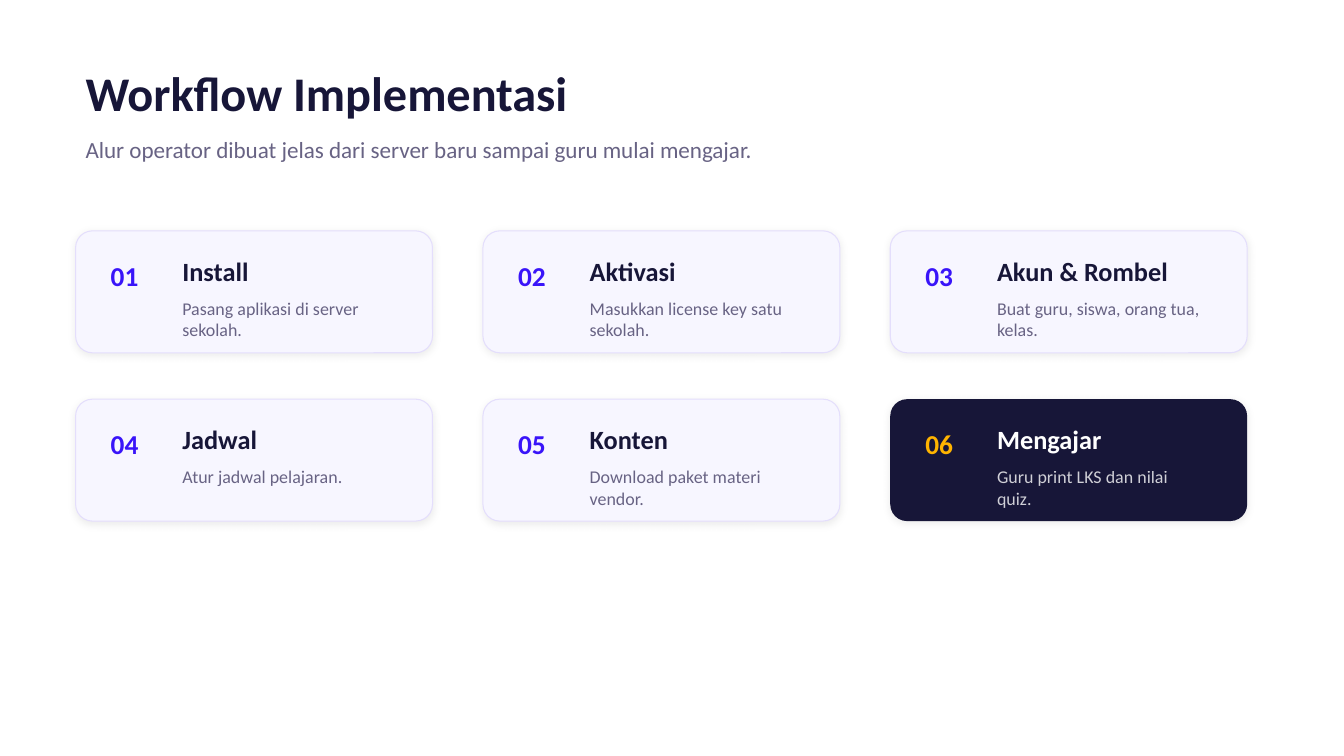
from dataclasses import dataclass

from lxml import etree
from pptx import Presentation
from pptx.dml.color import RGBColor
from pptx.enum.shapes import MSO_SHAPE
from pptx.enum.text import MSO_ANCHOR, MSO_AUTO_SIZE, PP_ALIGN
from pptx.oxml import parse_xml
from pptx.oxml.ns import nsdecls, qn
from pptx.util import Inches, Pt

ROUNDED = MSO_SHAPE.ROUNDED_RECTANGLE
TOP = MSO_ANCHOR.TOP
LEFT = PP_ALIGN.LEFT
NO_AUTOFIT = MSO_AUTO_SIZE.NONE
TITLE_ONLY_LAYOUT = 5

FONT = "Calibri"
NAVY, GREY, VIOLET, AMBER, WHITE = "171638", "686384", "3914F9", "FFB400", "FFFFFF"
PALE, BORDER = "F7F6FF", "E4DEFC"

COLUMNS = 3
GRID_LEFT, GRID_TOP = 0.75, 2.29
COLUMN_STEP, ROW_STEP = 4.04, 1.67
CARD_WIDTH, CARD_HEIGHT = 3.54, 1.21


@dataclass(frozen=True)
class CardStyle:
    fill: str
    border: str | None
    number: str
    heading: str
    detail: str
    detail_opacity: int = 100


@dataclass(frozen=True)
class Step:
    heading: str
    detail: str
    style: CardStyle


LIGHT = CardStyle(PALE, BORDER, VIOLET, NAVY, GREY)
DARK = CardStyle(NAVY, None, AMBER, WHITE, WHITE, 80)

STEPS = [
    Step("Install", "Pasang aplikasi di server sekolah.", LIGHT),
    Step("Aktivasi", "Masukkan license key satu sekolah.", LIGHT),
    Step("Akun & Rombel", "Buat guru, siswa, orang tua, kelas.", LIGHT),
    Step("Jadwal", "Atur jadwal pelajaran.", LIGHT),
    Step("Konten", "Download paket materi vendor.", LIGHT),
    Step("Mengajar", "Guru print LKS dan nilai quiz.", DARK),
]


def color(value: str) -> RGBColor:
    return RGBColor.from_string(value)


def write(shape, text: str, size: float, text_color: str,
          bold: bool = False, opacity: int = 100) -> None:
    """Fill a shape with one left-aligned, top-anchored paragraph."""
    frame = shape.text_frame
    frame.text = text
    frame.word_wrap = True
    frame.auto_size = NO_AUTOFIT
    frame.vertical_anchor = TOP
    paragraph = frame.paragraphs[0]
    paragraph.alignment = LEFT
    font = paragraph.runs[0].font
    font.name = FONT
    font.size = Pt(size)
    font.bold = bold
    font.color.rgb = color(text_color)
    if opacity < 100:
        rgb = paragraph.runs[0].font._element.find(f".//{qn('a:srgbClr')}")
        etree.SubElement(rgb, qn("a:alpha")).set("val", str(opacity * 1000))


def add_label(slide, left: float, top: float, width: float, height: float,
              text: str, size: float, text_color: str,
              bold: bool = False, opacity: int = 100) -> None:
    box = slide.shapes.add_textbox(Inches(left), Inches(top), Inches(width), Inches(height))
    write(box, text, size, text_color, bold, opacity)


def add_soft_shadow(shape) -> None:
    shape._element.spPr.append(parse_xml(
        f'<a:effectLst {nsdecls("a")}>'
        f'<a:outerShdw blurRad="{Pt(6)}" dist="{Pt(1.5)}" dir="5400000" rotWithShape="0">'
        '<a:srgbClr val="000000"><a:alpha val="8000"/></a:srgbClr>'
        '</a:outerShdw></a:effectLst>'))


def add_card(slide, left: float, top: float, number: int, step: Step) -> None:
    style = step.style
    card = slide.shapes.add_shape(
        ROUNDED, Inches(left), Inches(top), Inches(CARD_WIDTH), Inches(CARD_HEIGHT))
    card.adjustments[0] = 0.138
    card.fill.solid()
    card.fill.fore_color.rgb = color(style.fill)
    if style.border:
        card.line.color.rgb = color(style.border)
        card.line.width = Pt(0.75)
    else:
        card.line.fill.background()
    add_soft_shadow(card)
    add_label(slide, left + 0.25, top + 0.23, 0.6, 0.38,
              f"{number:02d}", 19.5, style.number, bold=True)
    add_label(slide, left + 0.96, top + 0.19, 2.29, 0.35,
              step.heading, 18.8, style.heading, bold=True)
    add_label(slide, left + 0.96, top + 0.61, 2.25, 0.4,
              step.detail, 12.8, style.detail, opacity=style.detail_opacity)


def main() -> None:
    presentation = Presentation()
    presentation.slide_width = Inches(13.33)
    presentation.slide_height = Inches(7.5)
    slide = presentation.slides.add_slide(presentation.slide_layouts[TITLE_ONLY_LAYOUT])

    title = slide.shapes.title
    title.left, title.top = Inches(0.75), Inches(0.58)
    title.width, title.height = Inches(7.92), Inches(0.65)
    write(title, "Workflow Implementasi", 34.5, NAVY, bold=True)
    add_label(slide, 0.75, 1.29, 8.33, 0.46,
              "Alur operator dibuat jelas dari server baru sampai guru mulai mengajar.",
              16.5, GREY)

    for index, step in enumerate(STEPS):
        row, column = divmod(index, COLUMNS)
        add_card(slide, GRID_LEFT + column * COLUMN_STEP, GRID_TOP + row * ROW_STEP,
                 index + 1, step)

    presentation.save("out.pptx")


if __name__ == "__main__":
    main()
